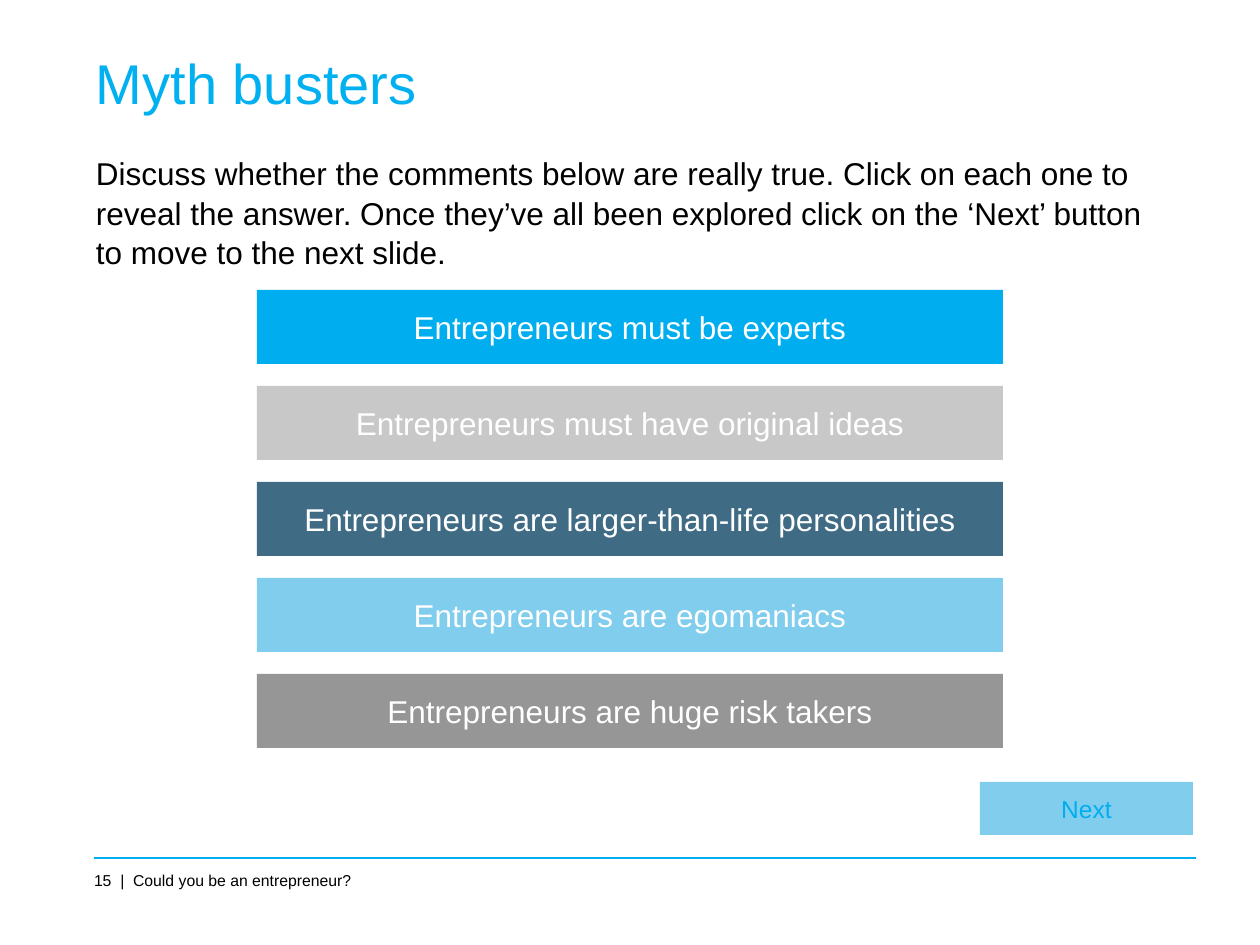
from lxml.etree import SubElement
from pptx import Presentation
from pptx.dml.color import RGBColor
from pptx.enum.shapes import MSO_CONNECTOR, MSO_SHAPE
from pptx.enum.text import MSO_ANCHOR, PP_ALIGN
from pptx.oxml.ns import qn
from pptx.util import Inches, Pt

PX = Inches(1) / 126
SLIDE_WIDTH, SLIDE_HEIGHT = 1260, 945

BLACK = RGBColor(0x00, 0x00, 0x00)
WHITE = RGBColor(0xFF, 0xFF, 0xFF)
TITLE_BLUE = RGBColor(0x00, 0xB0, 0xF0)
BRIGHT_BLUE = RGBColor(0x00, 0xAE, 0xEF)
PALE_BLUE = RGBColor(0x80, 0xCD, 0xED)
SLATE = RGBColor(0x40, 0x6B, 0x85)
GREY = RGBColor(0x96, 0x96, 0x96)

MYTHS = [
    ("Entrepreneurs must be experts", BRIGHT_BLUE, 100),
    ("Entrepreneurs must have original ideas", GREY, 52),
    ("Entrepreneurs are larger-than-life personalities", SLATE, 100),
    ("Entrepreneurs are egomaniacs", PALE_BLUE, 100),
    ("Entrepreneurs are huge risk takers", GREY, 100),
]
INSTRUCTIONS = (
    "Discuss whether the comments below are really true. Click on each one to "
    "reveal the answer. Once they’ve all been explored click on the ‘Next’ button "
    "\vto move to the next slide."
)


def emu(*lengths):
    return [round(length * PX) for length in lengths]


def write(shape, text, size, color, anchor, align=PP_ALIGN.LEFT):
    frame = shape.text_frame
    frame.margin_left = frame.margin_right = 0
    frame.margin_top = frame.margin_bottom = 0
    frame.word_wrap = True
    frame.vertical_anchor = anchor
    frame.text = text
    paragraph = frame.paragraphs[0]
    paragraph.alignment = align
    paragraph.font.name = "Arial"
    paragraph.font.size = Pt(size)
    paragraph.font.color.rgb = color
    return paragraph


def add_title(slide, left, top, width, height):
    title = slide.shapes.title
    title.left, title.top, title.width, title.height = emu(left, top, width, height)
    write(title, "Myth busters", 32, TITLE_BLUE, MSO_ANCHOR.MIDDLE)


def add_instructions(slide, left, top, width, height):
    instructions = slide.shapes.add_textbox(*emu(left, top, width, height))
    paragraph = write(instructions, INSTRUCTIONS, 18, BLACK, MSO_ANCHOR.TOP)
    paragraph.line_spacing = 1.05


def add_button(slide, box, label, size, color, fill, opacity=100):
    button = slide.shapes.add_shape(MSO_SHAPE.RECTANGLE, *emu(*box))
    button.shadow.inherit = False
    button.line.fill.background()
    button.fill.solid()
    button.fill.fore_color.rgb = fill
    if opacity < 100:
        fill_color = button.fill._xPr.find(qn("a:solidFill"))[0]
        SubElement(fill_color, qn("a:alpha"), val=str(opacity * 1000))
    write(button, label, size, color, MSO_ANCHOR.MIDDLE, PP_ALIGN.CENTER)


def add_myths(slide, left, top, width, height):
    bar_height = 74
    pitch = (height - bar_height) / (len(MYTHS) - 1)
    for row, (myth, fill, opacity) in enumerate(MYTHS):
        box = left, top + row * pitch, width, bar_height
        add_button(slide, box, myth, 18, WHITE, fill, opacity)


def add_footer(slide, left, top, width, height):
    rule = slide.shapes.add_connector(
        MSO_CONNECTOR.STRAIGHT, *emu(left, top, left + width, top)
    )
    rule.line.color.rgb = BRIGHT_BLUE
    rule.line.width = Pt(1)
    SubElement(rule._element.spPr, qn("a:effectLst"))
    caption_height = 19
    caption = slide.shapes.add_textbox(
        *emu(left, top + height - caption_height, 400, caption_height)
    )
    write(caption, "15  |  Could you be an entrepreneur?", 9, BLACK, MSO_ANCHOR.BOTTOM)


def main():
    deck = Presentation()
    deck.slide_width, deck.slide_height = emu(SLIDE_WIDTH, SLIDE_HEIGHT)
    slide = deck.slides.add_slide(deck.slide_layouts[5])
    add_footer(slide, 94, 858, 1102, 32)
    add_title(slide, 96, 48, 1111, 68)
    add_instructions(slide, 96, 152, 1062, 115)
    add_myths(slide, 257, 290, 746, 458)
    add_button(slide, (980, 782, 213, 53), "Next", 14, BRIGHT_BLUE, PALE_BLUE)
    deck.save("out.pptx")


if __name__ == "__main__":
    main()
